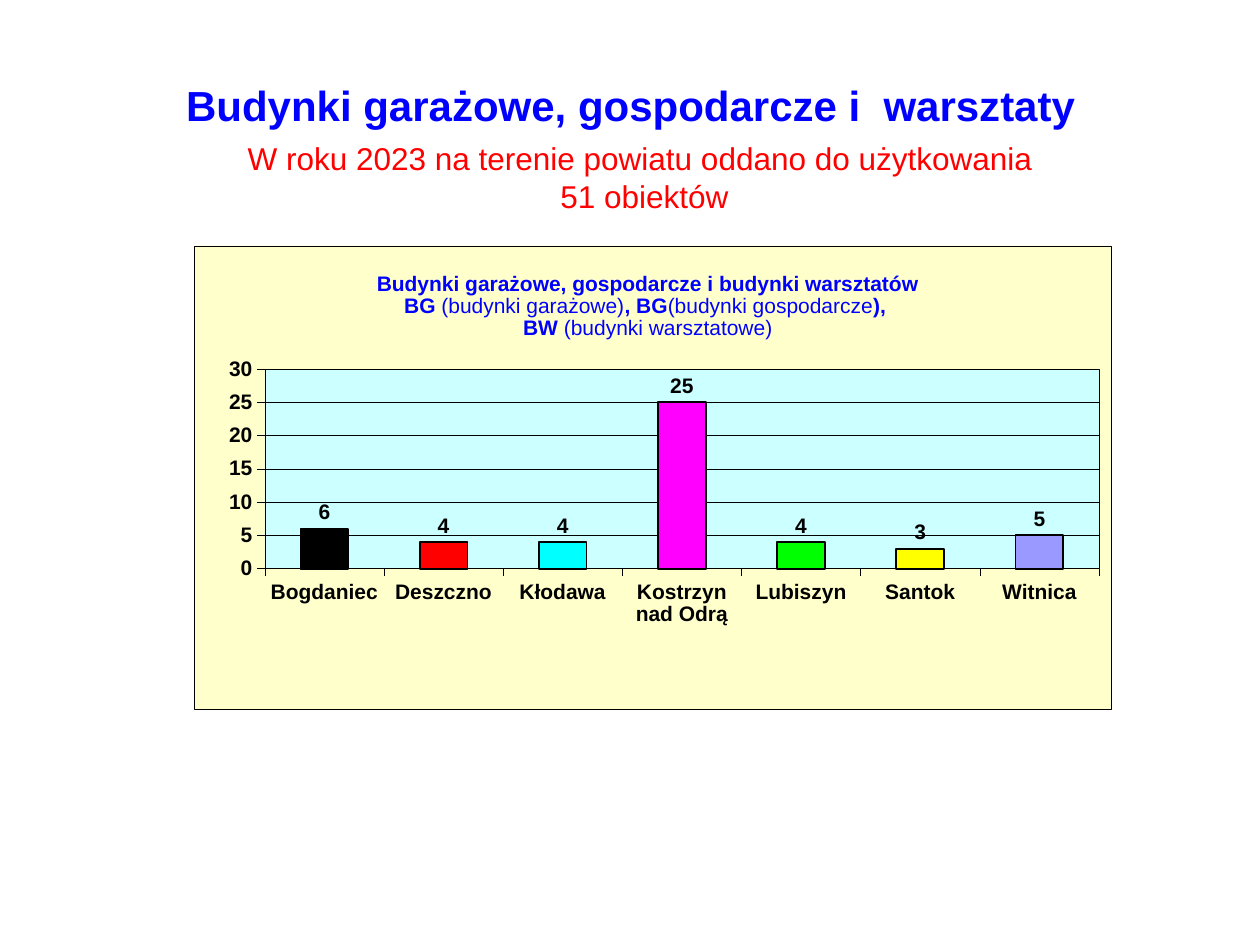
from lxml import etree
from pptx import Presentation
from pptx import util as u
from pptx.chart.data import CategoryChartData
from pptx.dml.color import RGBColor
from pptx.enum import chart as ch, text
from pptx.oxml import parse_xml
from pptx.oxml.ns import nsdecls, qn

BLACK, BLUE, RED = "000000", "0000FF", "FF0000"
BUILDINGS = {"Bogdaniec": (6, BLACK), "Deszczno": (4, RED), "Kłodawa": (4, "00FFFF"),
             "Kostrzyn nad Odrą": (25, "FF00FF"), "Lubiszyn": (4, "00FF00"),
             "Santok": (3, "FFFF00"), "Witnica": (5, "9999FF")}
CHART_TITLE = [
    [("Budynki garażowe, gospodarcze i budynki warsztatów", True)],
    [("BG", True), (" (budynki garażowe)", False), (", BG", True),
     ("(budynki gospodarcze", False), ("), ", True)],
    [("BW", True), (" (budynki warsztatowe)", False)],
]


def rgb(value):
    """Return the colour for a hex string."""
    return RGBColor.from_string(value)


def style_font(font, size, color, bold=False):
    """Apply the slide's typeface with a size, colour and weight."""
    font.name, font.size, font.bold = "Arial", u.Pt(size), bold
    font.color.rgb = rgb(color)


def style_line(line, width=0.25):
    """Make a line solid black."""
    line.color.rgb = rgb(BLACK)
    line.width = u.Pt(width)


def add_text(s, box, content, size, color, anchor, bold=False):
    """Add a centred paragraph in the given box."""
    tf = s.shapes.add_textbox(*map(u.Cm, box)).text_frame
    tf.word_wrap = True
    tf.vertical_anchor = anchor
    p = tf.paragraphs[0]
    p.text = content
    p.alignment = text.PP_ALIGN.CENTER
    for r in p.runs:
        style_font(r.font, size, color, bold)


def area_format(fill, outline):
    """Return chart area properties with a fill and a thin outline."""
    return parse_xml(
        f'<c:spPr {nsdecls("c", "a")}><a:solidFill><a:srgbClr val="{fill}"/></a:solidFill>'
        f'<a:ln w="3175"><a:solidFill><a:srgbClr val="{outline}"/></a:solidFill></a:ln></c:spPr>')


def set_layout(parent, index, **settings):
    """Give a chart part a manual layout at a child index."""
    for old in parent.findall(qn("c:layout")):
        parent.remove(old)
    layout = etree.Element(qn("c:layout"))
    manual = etree.SubElement(layout, qn("c:manualLayout"))
    for name, value in settings.items():
        etree.SubElement(manual, qn(f"c:{name}")).set("val", str(value))
    parent.insert(index, layout)


def add_chart_title(chart):
    """Write the three-line chart title."""
    title = chart.chart_title
    tf = title.text_frame
    for i, parts in enumerate(CHART_TITLE):
        p = tf.add_paragraph() if i else tf.paragraphs[0]
        p.alignment = text.PP_ALIGN.CENTER
        for content, bold in parts:
            r = p.add_run()
            r.text = content
            style_font(r.font, 12, BLUE, bold)
    set_layout(title._element, 1, xMode="edge", yMode="edge", x=0.195, y=0.045)


def style_axis(axis):
    """Format an axis with outside ticks and bold labels."""
    axis.major_tick_mark = ch.XL_TICK_MARK.OUTSIDE
    axis.minor_tick_mark = ch.XL_TICK_MARK.NONE
    style_font(axis.tick_labels.font, 12, BLACK, True)
    style_line(axis.format.line)


def add_buildings_chart(s, box):
    """Add the column chart of buildings by commune."""
    data = CategoryChartData()
    data.categories = list(BUILDINGS)
    data.add_series("Series 1", [value for value, _ in BUILDINGS.values()])
    chart = s.shapes.add_chart(ch.XL_CHART_TYPE.COLUMN_CLUSTERED, *map(u.Cm, box), data).chart
    style_font(chart.font, 10, BLACK)
    chart.has_legend = False
    add_chart_title(chart)

    style_axis(chart.category_axis)
    axis = chart.value_axis
    style_axis(axis)
    axis.minimum_scale, axis.maximum_scale, axis.major_unit = 0, 30, 5
    axis.has_major_gridlines = True
    style_line(axis.major_gridlines.format.line)

    plot = chart.plots[0]
    plot.gap_width = 150
    plot.vary_by_categories = False
    series = plot.series[0]
    series.format.fill.solid()
    series.format.fill.fore_color.rgb = rgb(BLACK)
    style_line(series.format.line, 1)
    for i, (_, color) in enumerate(BUILDINGS.values()):
        point = series.points[i].format
        point.fill.solid()
        point.fill.fore_color.rgb = rgb(color)
        style_line(point.line, 1)
    labels = series.data_labels
    labels.show_value = True
    labels.position = ch.XL_LABEL_POSITION.OUTSIDE_END
    style_font(labels.font, 12, BLACK, True)

    root = chart._chartSpace.find(qn("c:chart"))
    root.addnext(area_format("FFFFCC", BLACK))
    area = root.find(qn("c:plotArea"))
    set_layout(area, 0, layoutTarget="inner", xMode="edge", yMode="edge",
               x=0.077, y=0.266, w=0.91, h=0.431)
    area.append(area_format("CCFFFF", BLACK))


def main():
    """Build and save the slide."""
    prs = Presentation()
    prs.slide_width, prs.slide_height = u.Cm(25.4), u.Cm(19.05)
    s = prs.slides.add_slide(prs.slide_layouts[6])
    add_text(s, (2.51, 2.34, 20.96, 2.44),
             "W roku 2023 na terenie powiatu oddano do użytkowania \v51 obiektów",
             18, RED, text.MSO_ANCHOR.MIDDLE)
    add_text(s, (2.11, 1.47, 21.21, 1.27), "Budynki garażowe, gospodarcze i  warsztaty",
             24, BLUE, text.MSO_ANCHOR.BOTTOM, True)
    add_buildings_chart(s, (3.91, 4.95, 18.49, 9.35))
    prs.save("out.pptx")


if __name__ == "__main__":
    main()
